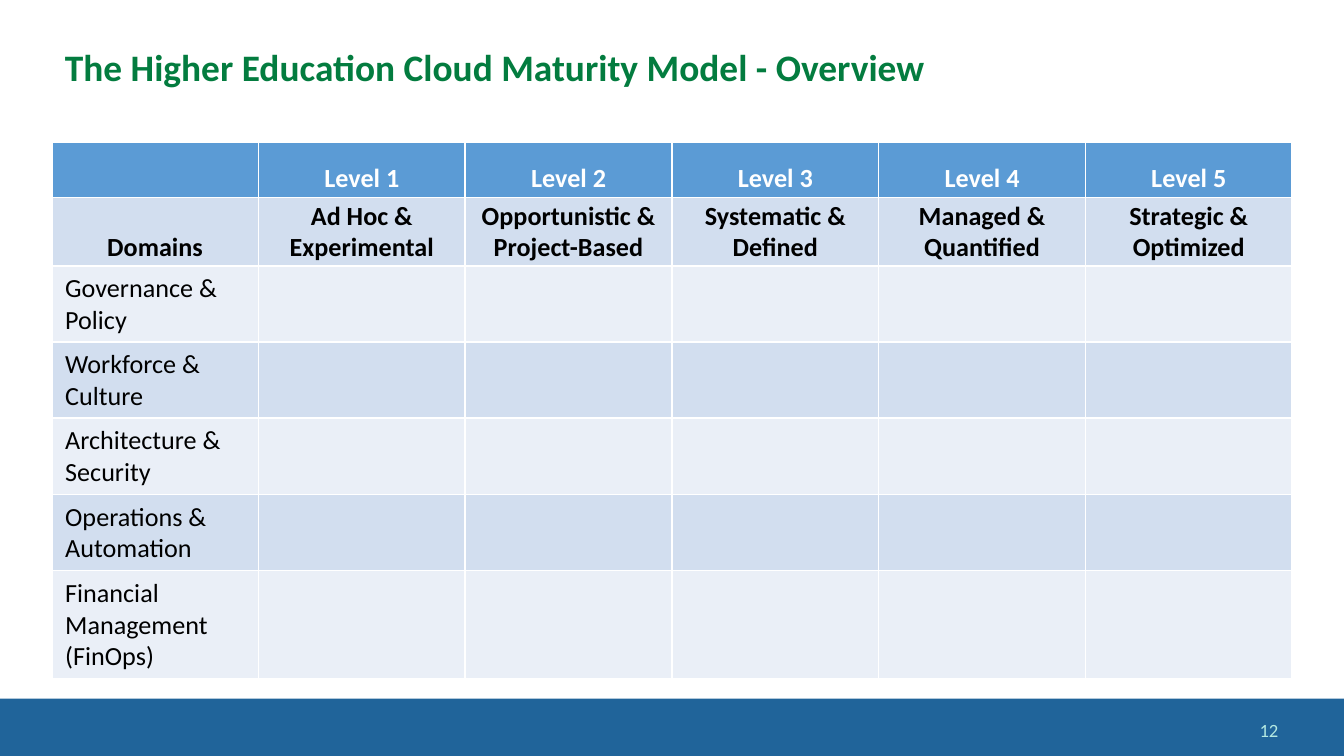
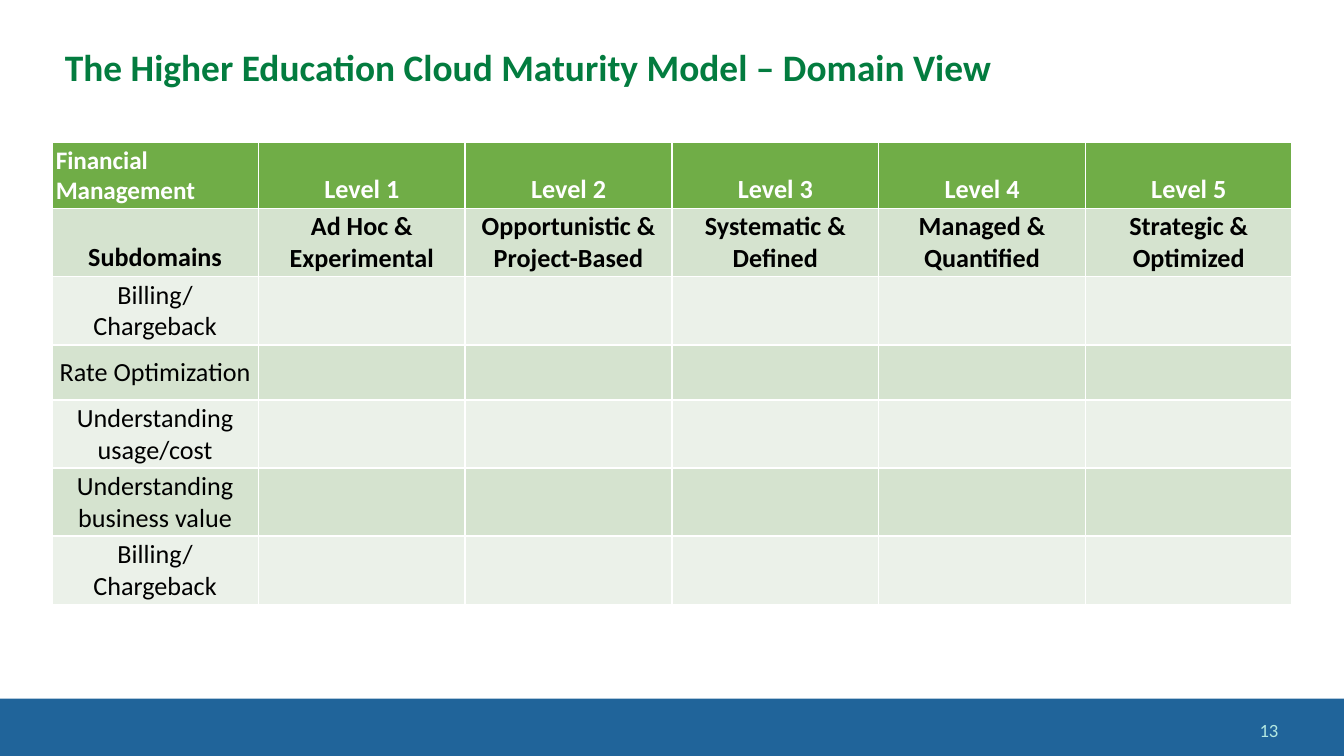
"""Build the two cloud maturity model slides."""
from dataclasses import dataclass
from typing import NamedTuple

from pptx import Presentation
from pptx.dml.color import RGBColor as Rgb
from pptx.enum.shapes import MSO_SHAPE as Preset
from pptx.enum.text import MSO_ANCHOR as Anchor, PP_ALIGN as Align
from pptx.util import Inches, Pt

FONT = "Calibri"
WIDTH = Inches(10)
HEIGHT = WIDTH * 9 // 16
COLORS = {
    "title": "037C3F",
    "footer": "20649A",
    "page": "B4E9E2",
    "white": "FFFFFF",
    "black": "000000",
    "blue": "5B9BD5",
    "blue_mid": "D2DEEF",
    "blue_pale": "EAEFF7",
    "green": "70AD47",
    "green_mid": "D5E3CF",
    "green_pale": "EBF1E9",
}
LEVELS = [f"Level {number}" for number in range(1, 6)]
STAGES = [
    "Ad Hoc & Experimental",
    "Opportunistic & Project-Based",
    "Systematic & Defined",
    "Managed & Quantified",
    "Strategic & Optimized",
]


def across(percent: float) -> int:
    """Return a share of the slide width."""
    return round(WIDTH * percent / 100)


def down(percent: float) -> int:
    """Return a share of the slide height."""
    return round(HEIGHT * percent / 100)


class Area(NamedTuple):
    """A place on the slide, in percent of its size."""
    left: float
    top: float
    width: float
    height: float

    def box(self) -> tuple[int, int, int, int]:
        """Return the place as slide lengths."""
        return (across(self.left), down(self.top),
                across(self.width), down(self.height))


class Style(NamedTuple):
    """The look of one piece of text."""
    color: str
    size: float = 14
    bold: bool = False
    align: Align = Align.LEFT
    spacing: float | None = None


class Padding(NamedTuple):
    """Cell padding, in percent of the slide size."""
    side: float
    edge: float


TITLE_AREA = Area(3.85, 2.49, 92.3, 13.51)
PAGE_AREA = Area(73.6, 93.87, 22.5, 5.33)
FOOTER_AREA = Area(0, 92.44, 100, 7.56)
ROW_HEIGHT = 7.29
TIGHT = Padding(0.3, 0.36)
ROOMY = Padding(1, 0.89)
TITLE = Style("title", 20, True, spacing=0.9)
PAGE = Style("page", 10, align=Align.RIGHT)
LEVEL = Style("white", bold=True, align=Align.CENTER)
STAGE = Style("black", bold=True, align=Align.CENTER)
CORNER = Style("white", 13.5, True)


@dataclass
class MaturityView:
    """One slide with its maturity grid."""
    title: str
    page: int
    hue: str
    corner: str
    heading: str
    domains: list[str]
    grid_height: float
    domain_style: Style
    domain_anchor: Anchor
    domain_padding: Padding


VIEWS = [
    MaturityView(
        "The Higher Education Cloud Maturity Model - Overview", 12, "blue",
        "", "Domains",
        ["Governance & Policy", "Workforce & Culture",
         "Architecture & Security", "Operations & Automation",
         "Financial Management (FinOps)"],
        71.11, Style("black"), Anchor.TOP, ROOMY),
    MaturityView(
        "The Higher Education Cloud Maturity Model – Domain View", 13, "green",
        "Financial Management", "Subdomains",
        ["Billing/ Chargeback", "Rate Optimization",
         "Understanding usage/cost", "Understanding business value",
         "Billing/ Chargeback"],
        61.16, Style("black", align=Align.CENTER), Anchor.MIDDLE, TIGHT),
]


def write(frame, text: str, style: Style) -> None:
    """Put one styled run into a text frame."""
    frame.word_wrap = True
    paragraph = frame.paragraphs[0]
    paragraph.alignment = style.align
    if style.spacing:
        paragraph.line_spacing = style.spacing
    run = paragraph.add_run()
    run.text = text
    run.font.name = FONT
    run.font.size = Pt(style.size)
    run.font.bold = style.bold
    run.font.color.rgb = Rgb.from_string(COLORS[style.color])


def add_label(slide, area: Area, text: str, style: Style) -> None:
    """Add a vertically centred text box."""
    frame = slide.shapes.add_textbox(*area.box()).text_frame
    frame.vertical_anchor = Anchor.MIDDLE
    write(frame, text, style)


def add_footer(slide, page: int) -> None:
    """Add the footer band and the page number."""
    band = slide.shapes.add_shape(Preset.RECTANGLE, *FOOTER_AREA.box())
    band.shadow.inherit = False
    band.fill.solid()
    band.fill.fore_color.rgb = Rgb.from_string(COLORS["footer"])
    band.line.fill.background()
    add_label(slide, PAGE_AREA, str(page), PAGE)


def fill_cell(cell, color: str, text: str, style: Style,
              anchor: Anchor, padding: Padding) -> None:
    """Colour a cell and write its text, if any."""
    cell.fill.solid()
    cell.fill.fore_color.rgb = Rgb.from_string(COLORS[color])
    if text:
        cell.vertical_anchor = anchor
        cell.margin_left = cell.margin_right = across(padding.side)
        cell.margin_top = cell.margin_bottom = down(padding.edge)
        write(cell.text_frame, text, style)


def add_grid(slide, view: MaturityView) -> None:
    """Add the table of domains by maturity level."""
    rows = [[view.corner, *LEVELS], [view.heading, *STAGES]]
    rows += [[domain, *[""] * len(LEVELS)] for domain in view.domains]
    area = Area(3.85, 18.84, 92.3, view.grid_height)
    holder = slide.shapes.add_table(len(rows), len(rows[0]), *area.box())
    grid = holder.table
    grid.horz_banding = False
    for row in grid.rows:
        row.height = down(ROW_HEIGHT)
    holder.height = down(view.grid_height)
    for r, texts in enumerate(rows):
        shade = "" if r == 0 else "_mid" if r % 2 else "_pale"
        for c, text in enumerate(texts):
            style, anchor, padding = (
                (CORNER if c == 0 else LEVEL, Anchor.BOTTOM, TIGHT) if r == 0
                else (STAGE, Anchor.BOTTOM, TIGHT) if r == 1
                else (view.domain_style, view.domain_anchor,
                      view.domain_padding))
            fill_cell(grid.cell(r, c), view.hue + shade, text,
                      style, anchor, padding)


def main() -> None:
    """Build and save the presentation."""
    deck = Presentation()
    deck.slide_width, deck.slide_height = WIDTH, HEIGHT
    for view in VIEWS:
        slide = deck.slides.add_slide(deck.slide_layouts[6])
        add_footer(slide, view.page)
        add_grid(slide, view)
        add_label(slide, TITLE_AREA, view.title, TITLE)
    deck.save("out.pptx")


if __name__ == "__main__":
    main()
